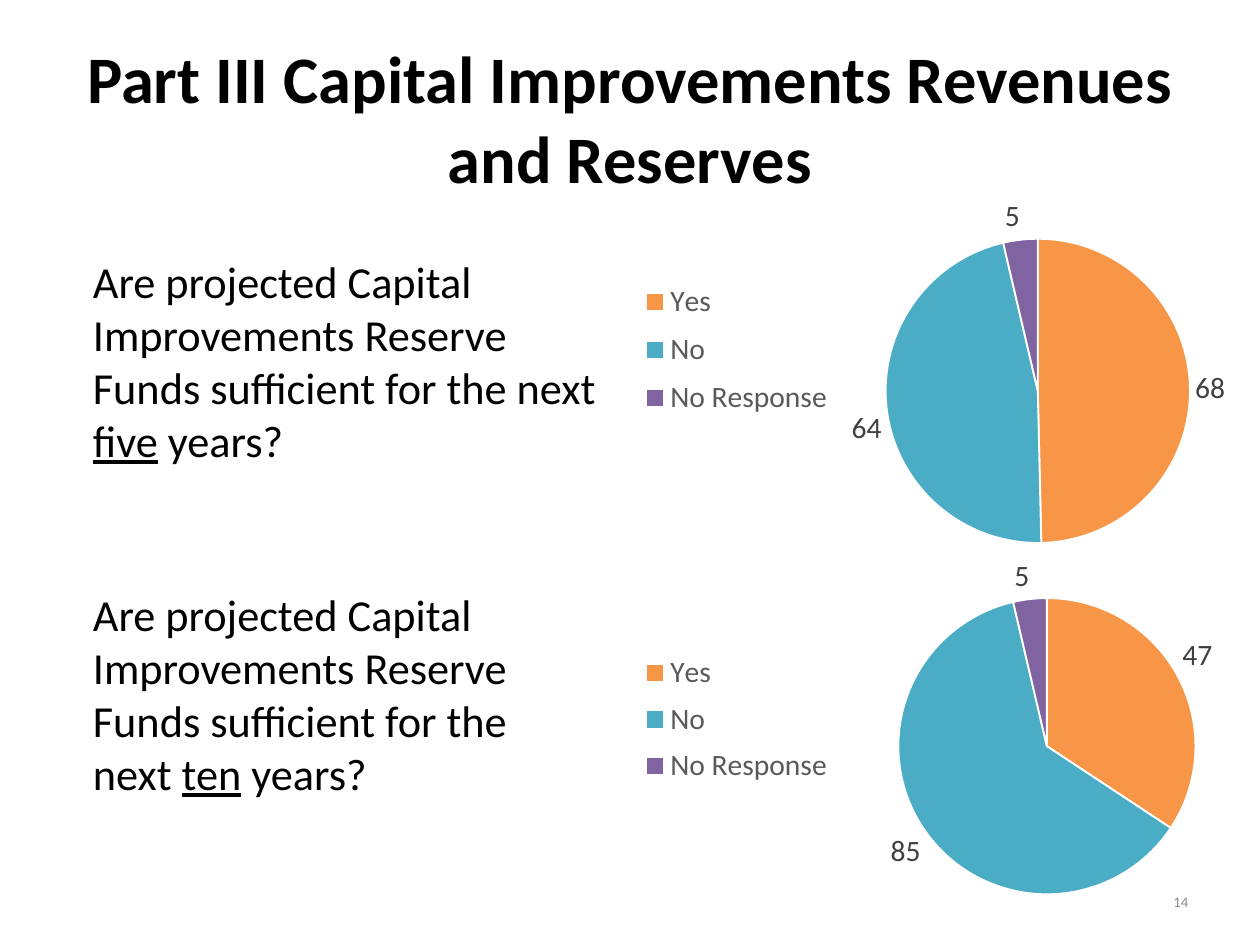
from dataclasses import dataclass

from lxml import etree
from pptx import Presentation
from pptx.chart.data import CategoryChartData
from pptx.dml.color import RGBColor
from pptx.enum.chart import XL_CHART_TYPE as ChartType
from pptx.enum.chart import XL_LABEL_POSITION as LabelPos
from pptx.enum.chart import XL_LEGEND_POSITION as LegendPos
from pptx.enum.text import MSO_ANCHOR as Anchor
from pptx.enum.text import PP_ALIGN as Align
from pptx.oxml.ns import qn
from pptx.util import Inches, Pt


@dataclass(frozen=True)
class Theme:
    font: str = "Calibri"
    title_size: int = 54
    question_size: int = 36
    chart_size: int = 24
    number_size: int = 12
    ink: str = "000000"
    legend_ink: str = "595959"
    label_ink: str = "404040"
    number_ink: str = "8C8C8C"
    slice_edge: str = "FFFFFF"
    slices: tuple = ("F79646", "4BACC6", "8064A2")


ANSWERS = ("Yes", "No", "No Response")
SURVEY = (
    dict(
        period="five",
        votes=(68, 64, 5),
        question_box=(0.95, 2.82, 5.92, 2.53),
        chart_box=(7.11, 2.11, 6.87, 4.19),
        pie_layout=(0.42, 0.14, 0.5, 0.82),
        legend_layout=(0.01, 0.23, 0.33, 0.42),
    ),
    dict(
        period="ten",
        votes=(47, 85, 5),
        question_box=(0.95, 6.58, 5.78, 2.52),
        chart_box=(7.11, 6.3, 6.87, 4.04),
        pie_layout=(0.41, 0.11, 0.55, 0.83),
        legend_layout=(0.01, 0.24, 0.33, 0.42),
    ),
)


def inches(box):
    return [Inches(length) for length in box]


def place(parent, position, fractions, inner=False):
    """Fix a chart part at x, y, w, h, as fractions of the chart."""
    for old in parent.findall(qn("c:layout")):
        parent.remove(old)
    layout = etree.Element(qn("c:layout"))
    manual = etree.SubElement(layout, qn("c:manualLayout"))
    settings = [("layoutTarget", "inner")] if inner else []
    settings += [("xMode", "edge"), ("yMode", "edge")]
    settings += zip("xywh", fractions)
    for tag, value in settings:
        etree.SubElement(manual, qn(f"c:{tag}")).set("val", str(value))
    parent.insert(position, layout)


class SurveySlide:
    def __init__(self, slide, theme):
        self.slide = slide
        self.theme = theme

    def style(self, font, size, color, **extra):
        formats = dict(name=self.theme.font, size=Pt(size), **extra)
        for attribute, value in formats.items():
            setattr(font, attribute, value)
        font.color.rgb = RGBColor.from_string(color)

    def text(self, box, parts, size, color, align=Align.LEFT, anchor=Anchor.TOP, bold=False):
        """Add one paragraph; parts holds (wording, underlined) pairs."""
        frame = self.slide.shapes.add_textbox(*inches(box)).text_frame
        frame.word_wrap = True
        frame.vertical_anchor = anchor
        paragraph = frame.paragraphs[0]
        paragraph.alignment = align
        for wording, underlined in parts:
            run = paragraph.add_run()
            run.text = wording
            self.style(run.font, size, color, bold=bold, underline=underlined)

    def question(self, box, period):
        stem = "Are projected Capital Improvements Reserve Funds sufficient for the next "
        parts = [(stem, False), (period, True), (" years?", False)]
        self.text(box, parts, self.theme.question_size, self.theme.ink)

    def pie(self, box, votes, pie_layout, legend_layout):
        theme = self.theme
        answers = CategoryChartData()
        answers.categories = ANSWERS
        answers.add_series("Series 1", votes)
        chart = self.slide.shapes.add_chart(ChartType.PIE, *inches(box), answers).chart
        self.style(chart.font, theme.chart_size, theme.ink)
        chart.has_title = False

        chart.has_legend = True
        legend = chart.legend
        legend.position = LegendPos.LEFT
        legend.include_in_layout = False
        self.style(legend.font, theme.chart_size, theme.legend_ink)

        plot = chart.plots[0]
        plot.vary_by_categories = True
        plot.has_data_labels = True
        labels = plot.data_labels
        label_formats = dict(
            show_value=True, show_percentage=False, position=LabelPos.OUTSIDE_END
        )
        for attribute, value in label_formats.items():
            setattr(labels, attribute, value)
        self.style(labels.font, theme.chart_size, theme.label_ink)

        for index, color in enumerate(theme.slices):
            piece = plot.series[0].points[index].format
            piece.fill.solid()
            piece.fill.fore_color.rgb = RGBColor.from_string(color)
            piece.line.color.rgb = RGBColor.from_string(theme.slice_edge)
            piece.line.width = Pt(1.5)

        plot_area = chart.element.find(".//" + qn("c:plotArea"))
        legend_part = chart.element.find(".//" + qn("c:legend"))
        place(plot_area, 0, pie_layout, inner=True)
        place(legend_part, 1, legend_layout)


def main():
    deck = Presentation()
    deck.slide_width, deck.slide_height = Inches(14.22), Inches(10.67)
    theme = Theme()
    page = SurveySlide(deck.slides.add_slide(deck.slide_layouts[6]), theme)

    page.text(
        (0.71, 0.43, 12.8, 1.78),
        [("Part III Capital Improvements Revenues and Reserves", False)],
        theme.title_size, theme.ink, Align.CENTER, Anchor.MIDDLE, bold=True,
    )
    page.text(
        (10.19, 9.89, 3.32, 0.57), [("14", False)],
        theme.number_size, theme.number_ink, Align.RIGHT, Anchor.MIDDLE,
    )
    for item in SURVEY:
        page.question(item["question_box"], item["period"])
        page.pie(item["chart_box"], item["votes"], item["pie_layout"], item["legend_layout"])

    deck.save("out.pptx")


if __name__ == "__main__":
    main()
